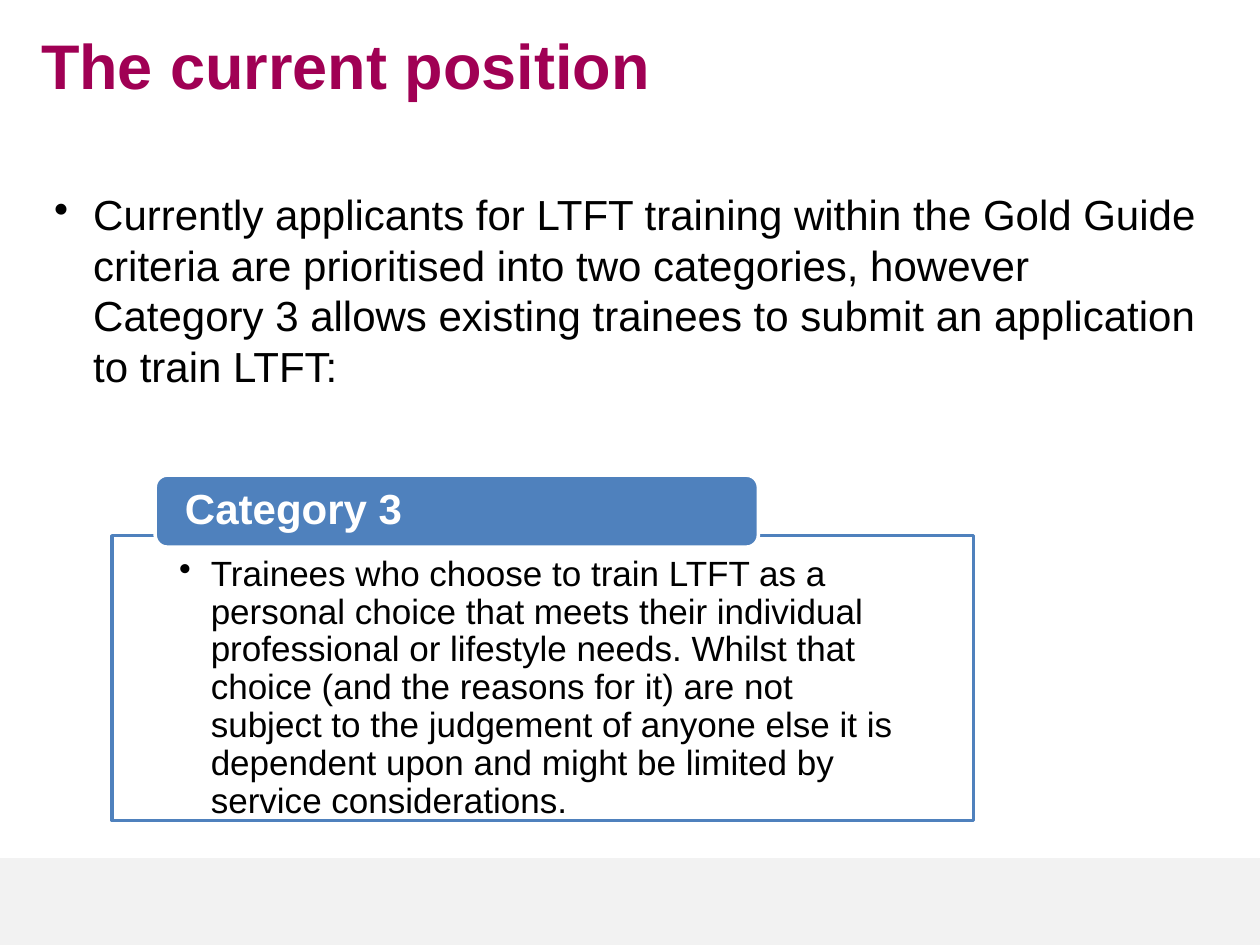
import pptx
import pptx.dml.color
import pptx.enum.shapes
import pptx.enum.text
import pptx.oxml
import pptx.util
from pptx.util import Cm

COLOURS = {
    "title": "A00054",
    "text": "000000",
    "accent": "4F81BD",
    "white": "FFFFFF",
    "footer": "F2F2F2",
}
FONT = "Arial"
SHAPES = pptx.enum.shapes.MSO_SHAPE
ANCHORS = pptx.enum.text.MSO_ANCHOR


def colour(name):
    return pptx.dml.color.RGBColor.from_string(COLOURS[name])


def add_panel(page, kind, box, fill, line=None):
    """Add a filled preset shape; box is left, top, width, height in cm."""
    panel = page.shapes.add_shape(kind, *map(Cm, box))
    panel.shadow.inherit = False
    panel.fill.solid()
    panel.fill.fore_color.rgb = colour(fill)
    if line:
        panel.line.color.rgb = colour(line)
        panel.line.width = pptx.util.Pt(2)
    else:
        panel.line.fill.background()
    return panel


def add_bullet(para, indent):
    properties = para._p.get_or_add_pPr()
    properties.set("marL", str(Cm(indent)))
    properties.set("indent", str(-Cm(indent)))
    bullet = pptx.oxml.parse_xml(
        '<a:buChar xmlns:a="http://schemas.openxmlformats.org/drawingml/2006/main" char="•"/>'
    )
    properties.append(bullet)


def write(shape, text, size, ink="text", bold=False, bullet_indent=None,
          spacing=None, insets=(0.25, 0.13), anchor=ANCHORS.TOP):
    """Put one paragraph in a shape; insets are horizontal and vertical in cm."""
    frame = shape.text_frame
    frame.word_wrap = True
    frame.vertical_anchor = anchor
    frame.margin_left = frame.margin_right = Cm(insets[0])
    frame.margin_top = frame.margin_bottom = Cm(insets[1])
    para = frame.paragraphs[0]
    para.alignment = pptx.enum.text.PP_ALIGN.LEFT
    if spacing:
        para.line_spacing = spacing
    if bullet_indent:
        add_bullet(para, bullet_indent)
    span = para.add_run()
    span.text = text
    span.font.name = FONT
    span.font.size = pptx.util.Pt(size)
    span.font.bold = bold
    span.font.color.rgb = colour(ink)


def add_footer(page, box):
    add_panel(page, SHAPES.RECTANGLE, box, "footer")


def add_title(page, box):
    write(page.shapes.add_textbox(*map(Cm, box)), "The current position",
          size=36, ink="title", bold=True)


def add_introduction(page, box):
    write(page.shapes.add_textbox(*map(Cm, box)),
          "Currently applicants for LTFT training within the Gold Guide criteria "
          "are prioritised into two categories, however Category 3 allows existing "
          "trainees to submit an application to train LTFT:",
          size=24, bullet_indent=0.79)


def add_category(page, box, heading, description):
    """Add a framed description with a heading tab over its top edge."""
    left, top, width, height = box
    tab_height, frame_drop = 1.45, 1.22
    frame = add_panel(page, SHAPES.RECTANGLE,
                      (left, top + frame_drop, width, height - frame_drop),
                      "white", "accent")
    write(frame, description, size=20, bullet_indent=0.64, spacing=0.9,
          insets=(1.35, 0.41))
    tab = add_panel(page, SHAPES.ROUNDED_RECTANGLE,
                    (left + 0.05 * width, top, 0.7 * width, tab_height),
                    "accent", "white")
    write(tab, heading, size=24, ink="white", bold=True, spacing=0.9,
          insets=(0.53, 0), anchor=ANCHORS.MIDDLE)


def main():
    deck = pptx.Presentation()
    deck.slide_width, deck.slide_height = Cm(25.4), Cm(19.05)
    page = deck.slides.add_slide(deck.slide_layouts[6])
    add_footer(page, (0, 17.3, 25.4, 1.75))
    add_introduction(page, (0.84, 3.68, 23.75, 4.5))
    add_title(page, (0.58, 0.41, 21.59, 1.88))
    add_category(
        page, (2.26, 9.58, 17.37, 6.96), "Category 3",
        "Trainees who choose to train LTFT as a personal choice that meets their "
        "individual professional or lifestyle needs. Whilst that choice (and the "
        "reasons for it) are not subject to the judgement of anyone else it is "
        "dependent upon and might be limited by service considerations.")
    deck.save("out.pptx")


if __name__ == "__main__":
    main()
